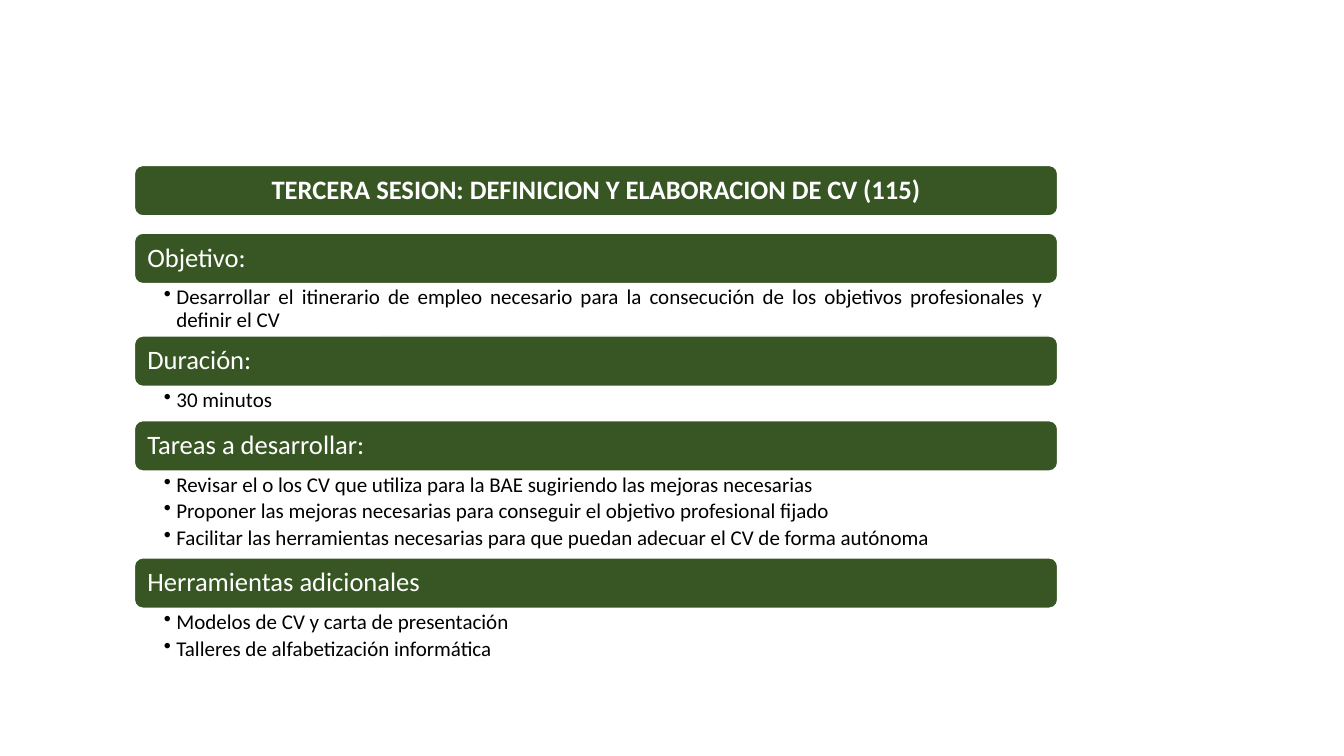
from lxml.etree import SubElement
from pptx import Presentation
from pptx.dml.color import RGBColor
from pptx.enum.shapes import MSO_SHAPE as Shape
from pptx.enum.text import MSO_ANCHOR as Anchor, MSO_AUTO_SIZE as AutoSize, PP_ALIGN as Align
from pptx.oxml.ns import qn
from pptx.util import Pt

# Content
TITLE = "TERCERA SESION: DEFINICION Y ELABORACION DE CV (115)"
# heading, height of the body, alignment of the body, tasks
SECTIONS = [
    ("Objetivo:", 37.4, Align.JUSTIFY, [
        "Desarrollar el itinerario de empleo necesario para la consecución"
        " de los objetivos profesionales y definir el CV"]),
    ("Duración:", 24.5, Align.LEFT, ["30 minutos"]),
    ("Tareas a desarrollar:", 62, Align.JUSTIFY, [
        "Revisar el o los CV que utiliza para la BAE sugiriendo las mejoras necesarias",
        "Proponer las mejoras necesarias para conseguir el objetivo profesional fijado",
        "Facilitar las herramientas necesarias para que puedan adecuar el CV de forma autónoma"]),
    ("Herramientas adicionales", 41, Align.LEFT, [
        "Modelos de CV y carta de presentación",
        "Talleres de alfabetización informática"]),
]

# Layout, in points
LEFT, WIDTH, BAR_HEIGHT = 96, 659.5, 36
TITLE_TOP, SECTIONS_TOP = 118.2, 166.6
HEADING_INSETS = (7.5, 5.5, 7.5, 5.5)
BODY_INSETS = (21, 2, 10.6, 2)
BULLET_INDENT = 9
GREEN, WHITE, BLACK = "385624", "FFFFFF", "000000"


def color(hex_value):
    return RGBColor.from_string(hex_value)


def set_frame(frame, insets, anchor):
    left, top, right, bottom = map(Pt, insets)
    values = dict(word_wrap=True, auto_size=AutoSize.NONE, vertical_anchor=anchor,
                  margin_left=left, margin_top=top, margin_right=right, margin_bottom=bottom)
    for name, value in values.items():
        setattr(frame, name, value)


def write(paragraph, text, size, ink, align, bold=False):
    paragraph.text = text
    paragraph.alignment = align
    paragraph.line_spacing = 0.9
    values = dict(name="Calibri", size=Pt(size), bold=bold)
    for name, value in values.items():
        setattr(paragraph.font, name, value)
    paragraph.font.color.rgb = color(ink)


def add_bar(top):
    bar = slide.shapes.add_shape(Shape.ROUNDED_RECTANGLE, Pt(LEFT), Pt(top),
                                 Pt(WIDTH), Pt(BAR_HEIGHT))
    bar.shadow.inherit = False
    bar.fill.solid()
    bar.fill.fore_color.rgb = color(GREEN)
    bar.line.color.rgb = color(WHITE)
    bar.line.width = Pt(1)
    return bar


def add_body(top, height, align, tasks):
    body = slide.shapes.add_textbox(Pt(LEFT), Pt(top), Pt(WIDTH), Pt(height)).text_frame
    set_frame(body, BODY_INSETS, Anchor.TOP)
    for index, task in enumerate(tasks):
        paragraph = body.add_paragraph() if index else body.paragraphs[0]
        paragraph.level = 1
        paragraph.space_after = Pt(3)
        paragraph.line_spacing = 0.9
        properties = paragraph._p.get_or_add_pPr()
        properties.set("marL", str(Pt(BULLET_INDENT)))
        properties.set("indent", str(-Pt(BULLET_INDENT)))
        SubElement(properties, qn("a:buChar"), char="•")
        write(paragraph, task, 15, BLACK, align)


deck = Presentation()
deck.slide_width, deck.slide_height = Pt(960), Pt(540)
slide = deck.slides.add_slide(deck.slide_layouts[5])

# Title on its bar
title_bar = add_bar(TITLE_TOP)
title = slide.shapes.title
title.left, title.top, title.width, title.height = map(Pt, (LEFT, TITLE_TOP, WIDTH, BAR_HEIGHT))
set_frame(title.text_frame, HEADING_INSETS, Anchor.MIDDLE)
write(title.text_frame.paragraphs[0], TITLE, 19, WHITE, Align.CENTER, bold=True)
title_bar._element.addnext(title._element)

# Sections, stacked without gaps
top = SECTIONS_TOP
for heading, body_height, align, tasks in SECTIONS:
    heading_frame = add_bar(top).text_frame
    set_frame(heading_frame, HEADING_INSETS, Anchor.MIDDLE)
    write(heading_frame.paragraphs[0], heading, 19, WHITE, Align.LEFT)
    add_body(top + BAR_HEIGHT, body_height, align, tasks)
    top += BAR_HEIGHT + body_height

deck.save("out.pptx")
